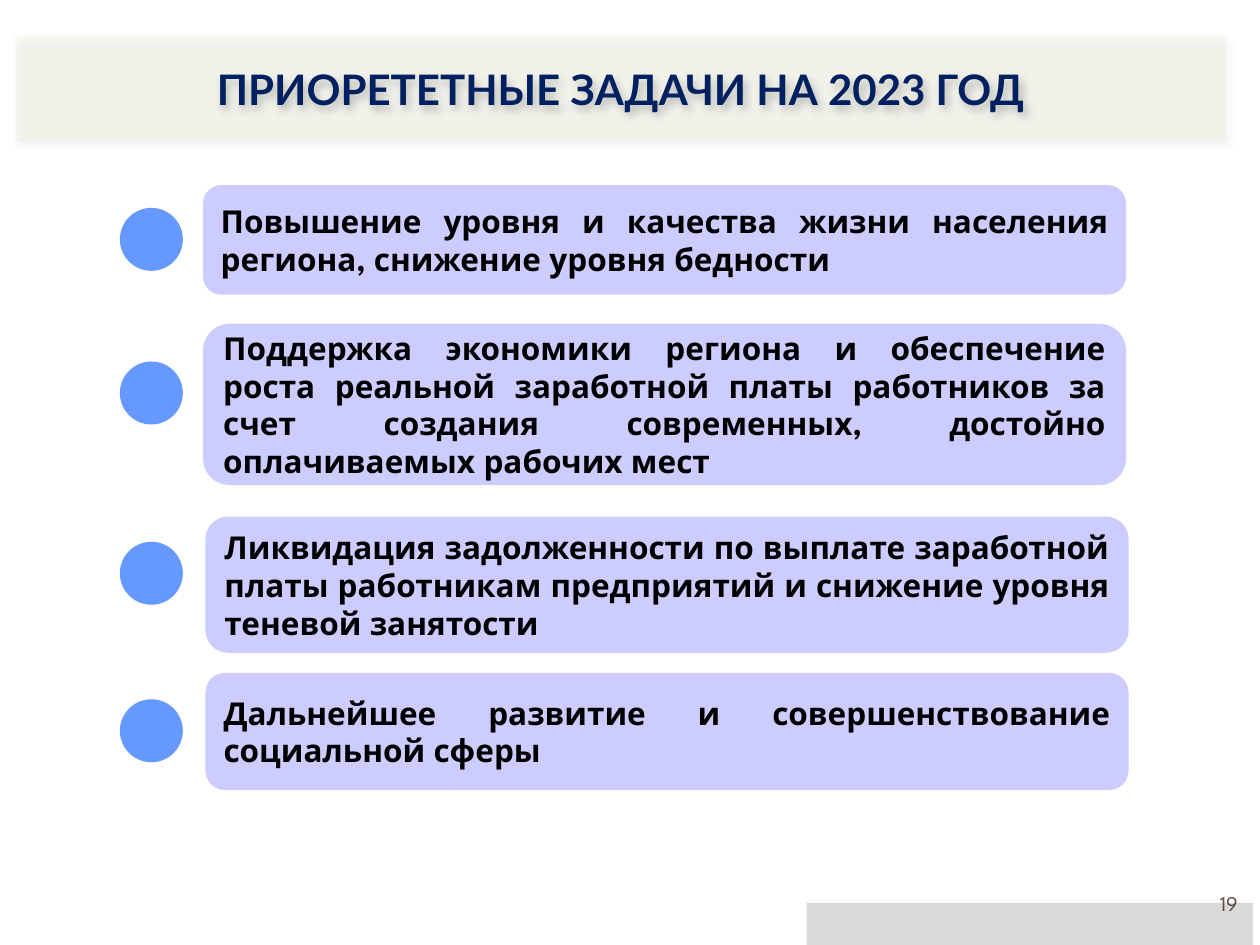
from lxml import etree
from pptx import Presentation
from pptx.dml.color import RGBColor
from pptx.enum import shapes, text
from pptx.oxml import ns
from pptx.util import Pt

KIND = shapes.MSO_SHAPE
ALIGN = text.PP_ALIGN
HEAD = "Lato"
BODY = "League Spartan"

# top, height and left of each card, top of its dot, wording
TASKS = [
    (105.8, 62.6, 116, 118.8,
     "Повышение уровня и качества жизни населения региона, "
     "снижение уровня бедности"),
    (185, 92.2, 116, 206.6,
     "Поддержка экономики региона и обеспечение роста реальной заработной "
     "платы работников за счет создания современных, достойно "
     "оплачиваемых рабочих мест"),
    (295.2, 77.8, 117.4, 309.6,
     "Ликвидация задолженности по выплате заработной платы работникам "
     "предприятий и снижение уровня теневой занятости"),
    (384.5, 67, 117.4, 399.6,
     "Дальнейшее развитие и совершенствование социальной сферы"),
]


def color(code):
    return RGBColor.from_string(code)


def add_box(slide, kind, left, top, width, height, fill):
    box = slide.shapes.add_shape(kind, Pt(left), Pt(top), Pt(width), Pt(height))
    box.shadow.inherit = False
    box.fill.solid()
    box.fill.fore_color.rgb = color(fill)
    box.line.fill.background()
    return box


def add_text(box, words, size, font, ink, align, bold=False):
    frame = box.text_frame
    frame.word_wrap = True
    frame.vertical_anchor = text.MSO_ANCHOR.MIDDLE
    para = frame.paragraphs[0]
    para.alignment = align
    run = para.add_run()
    run.text = words
    run.font.size = Pt(size)
    run.font.name = font
    run.font.bold = bold
    run.font.color.rgb = color(ink)


def add_alpha(node, percent):
    alpha = etree.SubElement(node, ns.qn("a:alpha"))
    alpha.set("val", str(percent * 1000))


def add_shadow(box):
    """Cast a soft shadow down and to the right."""
    effects = box._element.spPr.find(ns.qn("a:effectLst"))
    cast = etree.SubElement(effects, ns.qn("a:outerShdw"))
    cast.set("blurRad", str(Pt(4.5)))
    cast.set("dist", str(Pt(2.6)))
    cast.set("dir", str(53 * 60000))
    cast.set("rotWithShape", "0")
    tint = etree.SubElement(cast, ns.qn("a:srgbClr"))
    tint.set("val", "000000")
    add_alpha(tint, 30)


def add_title(slide, words):
    box = add_box(slide, KIND.RECTANGLE, 8.6, 20.2, 692, 60.5, "DFE0B1")
    add_alpha(box._element.spPr.find(".//" + ns.qn("a:srgbClr")), 14)
    add_shadow(box)
    add_text(box, words, 24, HEAD, "002060", ALIGN.CENTER, True)


def add_task(slide, top, height, left, dot, words):
    card = add_box(slide, KIND.ROUNDED_RECTANGLE, left, top, 527.5, height, "CCCCFF")
    add_text(card, words, 18, BODY, "000000", ALIGN.JUSTIFY, True)
    add_box(slide, KIND.FLOWCHART_CONNECTOR, 68.5, dot, 36, 36, "6699FF")


def add_number(slide, words):
    box = slide.shapes.add_textbox(Pt(546.5), Pt(501.8), Pt(167.8), Pt(28.8))
    add_text(box, words, 12, BODY, "564B3C", ALIGN.RIGHT)


def main():
    deck = Presentation()
    deck.slide_width, deck.slide_height = Pt(720), Pt(540)
    slide = deck.slides.add_slide(deck.slide_layouts[6])
    add_box(slide, KIND.RECTANGLE, 461, 516, 255, 24, "D9D9D9")
    add_title(slide, "ПРИОРЕТЕТНЫЕ ЗАДАЧИ НА 2023 ГОД")
    for task in TASKS:
        add_task(slide, *task)
    add_number(slide, "19")
    deck.save("out.pptx")


if __name__ == "__main__":
    main()
